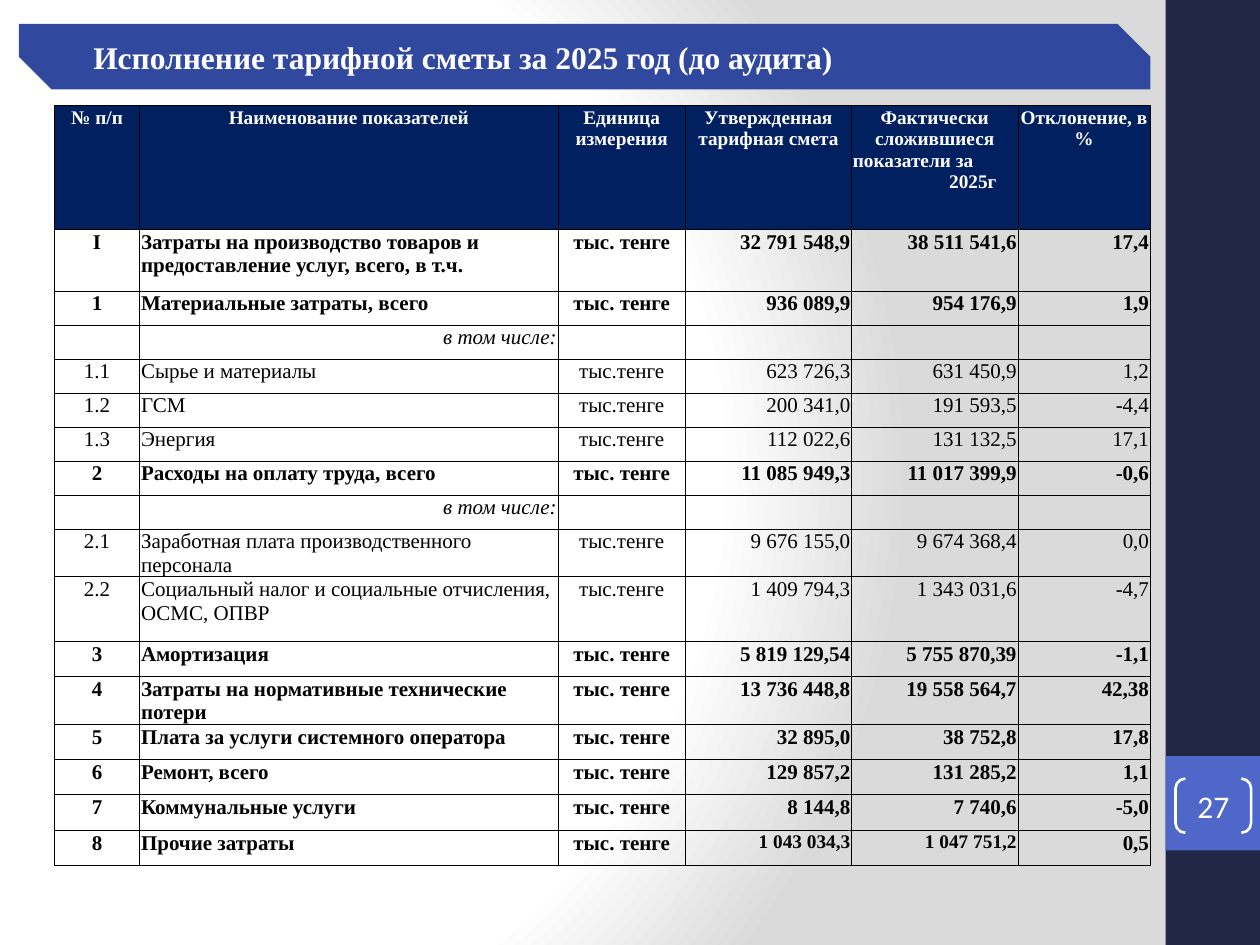
from lxml.etree import SubElement
from pptx import Presentation
from pptx.dml.color import RGBColor
from pptx.enum.shapes import MSO_SHAPE
from pptx.enum.text import MSO_ANCHOR, PP_ALIGN
from pptx.oxml import parse_xml
from pptx.oxml.ns import nsdecls, qn
from pptx.util import Inches, Pt

SERIF = "Times New Roman"
LEFT, CENTER, RIGHT = PP_ALIGN.LEFT, PP_ALIGN.CENTER, PP_ALIGN.RIGHT


def color(code):
    return RGBColor.from_string(code)


def write(frame, text, size=12, font=SERIF, ink="000000", bold=False,
          italic=False, align=LEFT, left=0, right=0):
    """Fill the first paragraph of a frame, or add one after it."""
    para = frame.add_paragraph() if frame.text else frame.paragraphs[0]
    para.alignment = align
    para._p.get_or_add_pPr().set("marL", str(Inches(left)))
    para._p.get_or_add_pPr().set("marR", str(Inches(right)))
    if not text:
        para._p.get_or_add_endParaRPr().set("sz", str(size * 100))
        return
    span = para.add_run()
    span.text = text
    span.font.size, span.font.name = Pt(size), font
    span.font.bold, span.font.italic = bold, italic
    span.font.color.rgb = color(ink)


deck = Presentation()
deck.slide_width, deck.slide_height = Inches(10), Inches(7.5)
page = deck.slides.add_slide(deck.slide_layouts[6])
column, row = deck.slide_width / 100, deck.slide_height / 75  # page grid

# Background: white fading to grey
page.background.fill.solid()
properties = page.background._cSld.bg.bgPr
stops = "".join(f'<a:gs pos="{place * 1000}"><a:srgbClr val="{color(code)}"/></a:gs>'
                for place, code in [(0, "FFFFFF"), (75, "FFFFFF"), (100, "DADADA")])
properties.replace(properties[0], parse_xml(
    f'<a:gradFill {nsdecls("a")} rotWithShape="1"><a:gsLst>{stops}</a:gsLst>'
    '<a:path path="circle"><a:fillToRect l="20000" t="50000" r="100000" b="50000"/>'
    '</a:path></a:gradFill>'))

# Side band, number tile, number brackets and title ribbon
shapes = {}
for name, kind, x, y, wide, high, fill, line, adjust in [
    ("band", MSO_SHAPE.RECTANGLE, 92.5, 0, 7.5, 75, "212745", None, []),
    ("tile", MSO_SHAPE.RECTANGLE, 92.5, 60, 7.5, 7.5, "4E67C8", None, []),
    ("number", MSO_SHAPE.DOUBLE_BRACKET, 93.3, 61.8, 6, 4.3, None, "FFFFFF", [0.18]),
    ("title", MSO_SHAPE.SNIP_2_DIAG_RECTANGLE, 1.5, 1.9, 89.8, 5.2, "31489F", None, [0, 0.5]),
]:
    shape = page.shapes.add_shape(kind, int(x * column), int(y * row),
                                  int(wide * column), int(high * row))
    shape.shadow.inherit = False
    for index, value in enumerate(adjust):
        shape.adjustments[index] = value
    if fill:
        shape.fill.solid()
        shape.fill.fore_color.rgb = color(fill)
    else:
        shape.fill.background()
    if line:
        shape.line.color.rgb = color(line)
        shape.line.width = Pt(1.5)
    else:
        shape.line.fill.background()
    shapes[name] = shape

for name, side, edge in [("number", 0, 0), ("title", 0.07, 0.04)]:
    frame = shapes[name].text_frame
    frame.margin_left = frame.margin_right = Inches(side)
    frame.margin_top = frame.margin_bottom = Inches(edge)
    frame.vertical_anchor = MSO_ANCHOR.MIDDLE
    frame.word_wrap = True
write(shapes["number"].text_frame, "27", size=18, font="Calibri", ink="FFFFFF", align=CENTER)
write(shapes["title"].text_frame, "Исполнение тарифной сметы за 2025 год (до аудита)",
      size=18, ink="FFFFFF", bold=True, left=0.39)

# Table content: number, indicator, approved, actual, deviation
headings = ["№ п/п", "Наименование показателей", "Единица измерения",
            "Утвержденная тарифная смета", "Фактически сложившиеся", "Отклонение, в %"]
INCLUDING = ("", "в том числе:", "", "", "")
records = [
    ("I", "Затраты на производство товаров и предоставление услуг, всего, в т.ч.",
     "32 791 548,9", "38 511 541,6", "17,4"),
    ("1", "Материальные затраты, всего", "936 089,9", "954 176,9", "1,9"),
    INCLUDING,
    ("1.1", "Сырье и материалы", "623 726,3", "631 450,9", "1,2"),
    ("1.2", "ГСМ", "200 341,0", "191 593,5", "-4,4"),
    ("1.3", "Энергия", "112 022,6", "131 132,5", "17,1"),
    ("2", "Расходы на оплату труда, всего", "11 085 949,3", "11 017 399,9", "-0,6"),
    INCLUDING,
    ("2.1", "Заработная плата производственного персонала",
     "9 676 155,0", "9 674 368,4", "0,0"),
    ("2.2", "Социальный налог и социальные отчисления, ОСМС, ОПВР",
     "1 409 794,3", "1 343 031,6", "-4,7"),
    ("3", "Амортизация", "5 819 129,54", "5 755 870,39", "-1,1"),
    ("4", "Затраты на нормативные технические потери",
     "13 736 448,8", "19 558 564,7", "42,38"),
    ("5", "Плата за услуги системного оператора", "32 895,0", "38 752,8", "17,8"),
    ("6", "Ремонт, всего", "129 857,2", "131 285,2", "1,1"),
    ("7", "Коммунальные услуги", "8 144,8", "7 740,6", "-5,0"),
    ("8", "Прочие затраты", "1 043 034,3", "1 047 751,2", "0,5"),
]
widths = [6.8, 33.2, 10.1, 13.2, 13.2, 10.5]
heights = [9.8, 4.9] + [2.7] * 7 + [2.8, 5.1] + [2.8] * 6

table = page.shapes.add_table(
    len(heights), len(widths), int(4.3 * column), int(8.4 * row),
    int(sum(widths) * column), int(sum(heights) * row)).table
table.horz_banding = False
for table_column, wide in zip(table.columns, widths):
    table_column.width = int(wide * column)
for table_row, high in zip(table.rows, heights):
    table_row.height = int(high * row)

# Cell margins and thin black borders
for cell in table.iter_cells():
    cell.margin_left = cell.margin_right = cell.margin_top = Inches(0.01)
    cell.margin_bottom = 0
    for side in ("lnL", "lnR", "lnT", "lnB"):
        border = SubElement(cell._tc.get_or_add_tcPr(), qn(f"a:{side}"), w=str(Pt(0.5)))
        paint = SubElement(border, qn("a:solidFill"))
        SubElement(paint, qn("a:srgbClr"), val=str(color("000000")))
    cell.fill.background()

# Heading row
heading_style = dict(size=11, ink="FFFFFF", bold=True)
for cell, heading in zip(table.rows[0].cells, headings):
    cell.fill.solid()
    cell.fill.fore_color.rgb = color("002060")
    write(cell.text_frame, heading, align=CENTER, **heading_style)
actual = table.cell(0, 4).text_frame
write(actual, "показатели за", **heading_style)
write(actual, "2025г", align=RIGHT, right=0.16, **heading_style)

# Body rows: whole numbers are totals in bold, the rest are plain
for table_row, record in zip(list(table.rows)[1:], records):
    number, indicator, *amounts = record
    including = record == INCLUDING
    total = not including and "." not in number
    unit = "" if including else "тыс. тенге" if total else "тыс.тенге"
    aligns = [CENTER, RIGHT if including else LEFT, CENTER, RIGHT, RIGHT, RIGHT]
    for index, text in enumerate([number, indicator, unit, *amounts]):
        small = number == "8" and index in (3, 4)
        write(table_row.cells[index].text_frame, text, size=11 if small else 12,
              bold=total, italic=including, align=aligns[index])

deck.save("out.pptx")
